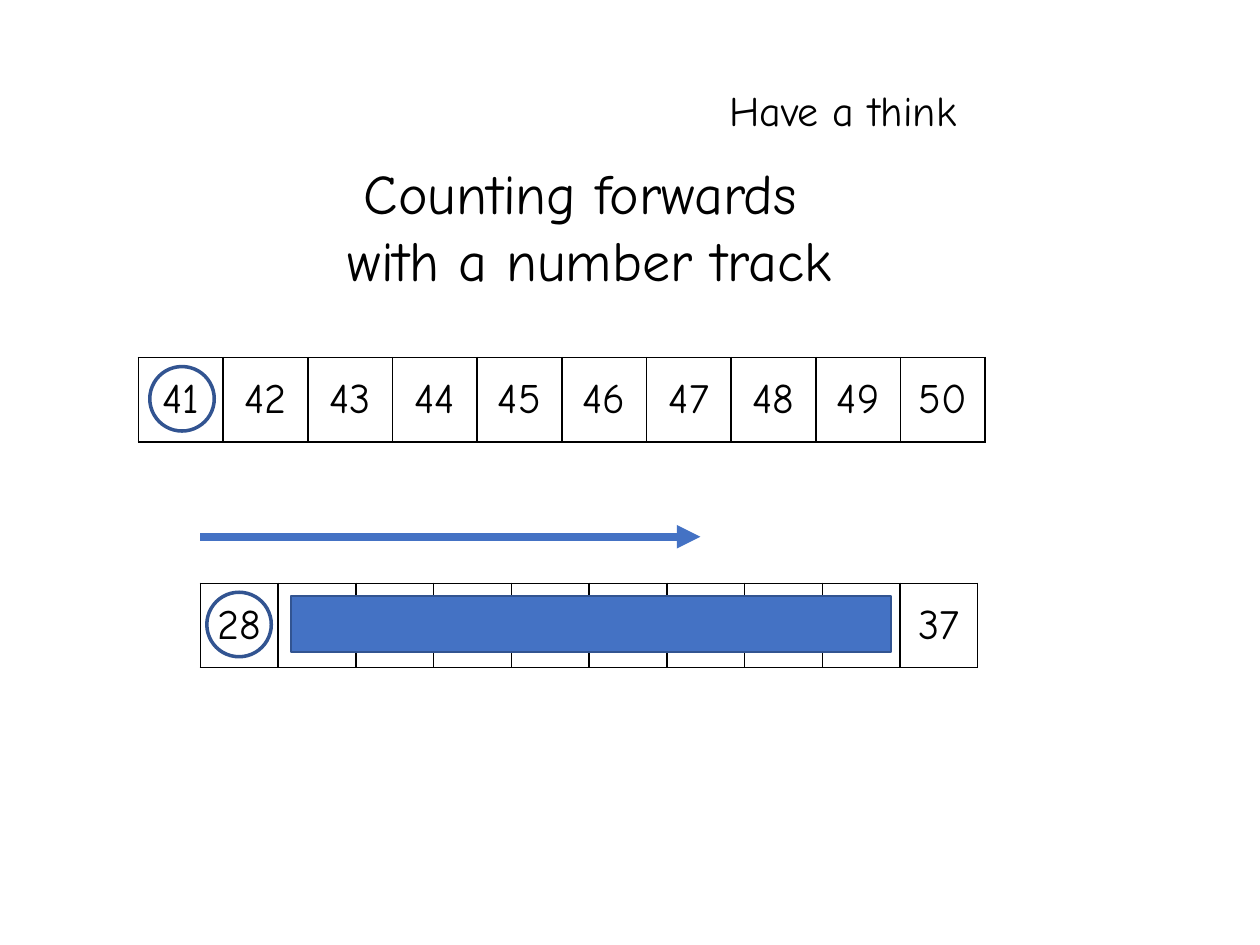
from lxml import etree
from pptx import Presentation
from pptx.dml.color import RGBColor
from pptx.enum import shapes, text
from pptx.oxml import ns
from pptx.util import Cm, Pt

BLACK = RGBColor(0x00, 0x00, 0x00)
BLUE = RGBColor(0x44, 0x72, 0xC4)
DARK_BLUE = RGBColor(0x32, 0x54, 0x91)
FONT = {"name": "Comic Neue", "size": Pt(24), "bold": False}
TITLE_FONT = {**FONT, "size": Pt(32)}
CELL_SIDES = ("a:lnL", "a:lnR", "a:lnT", "a:lnB")


def add_child(parent, tag, **attrs):
    return etree.SubElement(parent, ns.qn(tag), attrs)


def format_paragraph(p, fmt, align):
    p.alignment = align
    for r in p.runs:
        for name, value in fmt.items():
            setattr(r.font, name, value)
        r.font.color.rgb = BLACK


def set_text(tf, lines, fmt, align):
    tf.word_wrap = True
    tf.vertical_anchor = text.MSO_ANCHOR.TOP
    tf.auto_size = text.MSO_AUTO_SIZE.NONE
    tf.text = "\n".join(lines)
    for p in tf.paragraphs:
        format_paragraph(p, fmt, align)


def add_title(s, lines, left, top, width, height):
    sp = s.shapes.title
    sp.left, sp.top, sp.width, sp.height = map(Cm, (left, top, width, height))
    set_text(sp.text_frame, lines, TITLE_FONT, text.PP_ALIGN.CENTER)


def add_label(s, line, left, top, width, height):
    sp = s.shapes.add_textbox(*map(Cm, (left, top, width, height)))
    set_text(sp.text_frame, [line], FONT, text.PP_ALIGN.LEFT)


def add_borders(cell):
    """Draw a thin black line on every side; borders must precede the fill."""
    tc_pr = cell._tc.get_or_add_tcPr()
    for i, side in enumerate(CELL_SIDES):
        ln = add_child(tc_pr, side, w=str(Pt(1)))
        fill = add_child(ln, "a:solidFill")
        add_child(fill, "a:srgbClr", val=str(BLACK))
        tc_pr.insert(i, ln)


def add_number_track(s, numbers, left, top, width, height=1.7):
    frame = s.shapes.add_table(1, len(numbers), *map(Cm, (left, top, width, height)))
    table = frame.table
    table.first_row = table.horz_banding = False
    for cell, number in zip(table.iter_cells(), numbers):
        cell.text = str(number)
        cell.vertical_anchor = text.MSO_ANCHOR.MIDDLE
        cell.fill.background()
        add_borders(cell)
        format_paragraph(cell.text_frame.paragraphs[0], FONT, text.PP_ALIGN.CENTER)


def add_arrow(s, x1, x2, y):
    line = s.shapes.add_connector(
        shapes.MSO_CONNECTOR.STRAIGHT, *map(Cm, (x1, y, x2, y)))
    line.line.color.rgb = BLUE
    line.line.width = Pt(4.5)
    add_child(line.line._get_or_add_ln(), "a:tailEnd", type="triangle")
    add_child(line._element.spPr, "a:effectLst")


def add_outlined_shape(s, kind, box, line_width, fill=None):
    sp = s.shapes.add_shape(kind, *map(Cm, box))
    sp.shadow.inherit = False
    if fill is None:
        sp.fill.background()
    else:
        sp.fill.solid()
        sp.fill.fore_color.rgb = fill
    sp.line.color.rgb = DARK_BLUE
    sp.line.width = Pt(line_width)


def add_ring(s, left, top, size=1.3):
    add_outlined_shape(s, shapes.MSO_SHAPE.OVAL, (left, top, size, size), 2)


def main():
    prs = Presentation()
    prs.slide_width, prs.slide_height = Cm(25.4), Cm(19.05)
    s = prs.slides.add_slide(prs.slide_layouts[5])

    add_title(s, ["Counting forwards ", "with a number track"], 0.69, 3.07, 22.4, 3)
    add_number_track(s, range(28, 38), 4.04, 11.76, 15.67)
    add_number_track(s, range(41, 51), 2.79, 7.21, 17.07)
    add_arrow(s, 4.04, 14.12, 10.82)
    add_outlined_shape(
        s, shapes.MSO_SHAPE.RECTANGLE, (5.87, 12.01, 12.09, 1.14), 1, BLUE)
    add_ring(s, 3.02, 7.39)
    add_ring(s, 4.17, 11.94)
    add_label(s, "Have a think", 14.45, 1.57, 6.48, 1.27)

    prs.save("out.pptx")


if __name__ == "__main__":
    main()
